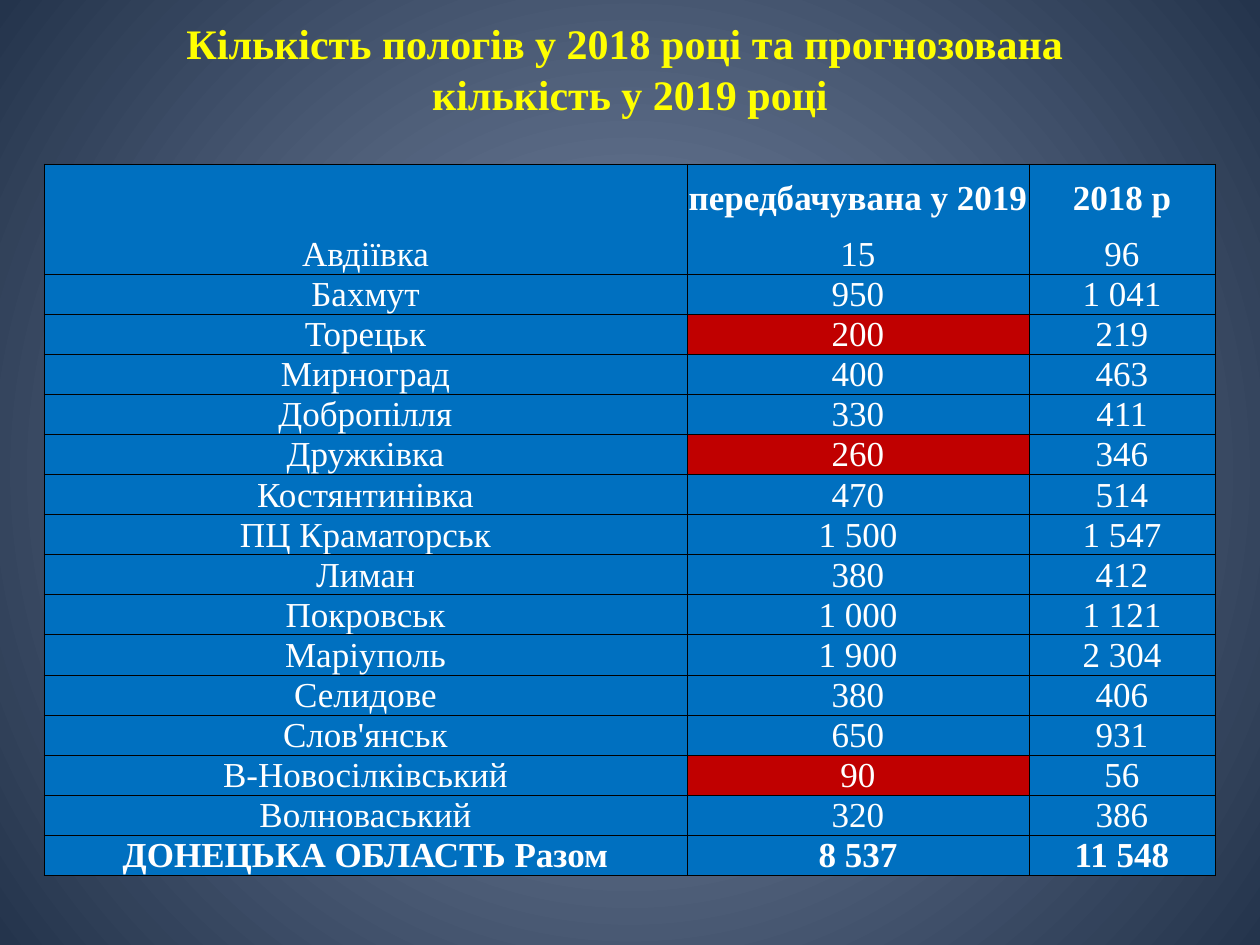
from lxml import etree
from pptx import Presentation, util as u
from pptx.dml.color import RGBColor
from pptx.enum import text
from pptx.oxml.ns import qn

TITLE = "Кількість пологів у 2018 році та прогнозована \nкількість у 2019 році"
ROWS = [
    ("", "передбачувана у 2019", "2018 р"),
    ("Авдiївка", "15", "96"),
    ("Бахмут", "950", "1 041"),
    ("Торецьк", "200", "219"),
    ("Мирноград", "400", "463"),
    ("Добропiлля", "330", "411"),
    ("Дружкiвка", "260", "346"),
    ("Костянтинiвка", "470", "514"),
    ("ПЦ Краматорськ", "1 500", "1 547"),
    ("Лиман", "380", "412"),
    ("Покровськ", "1 000", "1 121"),
    ("Марiуполь", "1 900", "2 304"),
    ("Селидове", "380", "406"),
    ("Слов'янськ", "650", "931"),
    ("В-Новосілкiвський", "90", "56"),
    ("Волноваський", "320", "386"),
    ("ДОНЕЦЬКА ОБЛАСТЬ Разом", "8 537", "11 548"),
]
ALERTS = {"Торецьк", "Дружкiвка", "В-Новосілкiвський"}  # forecast shown in red
COLS = (643, 342, 186)
HEAD_H, BODY_H = 70, 642
BLUE, RED, WHITE, YELLOW, BLACK = "0070C0", "C00000", "FFFFFF", "FFFF00", "000000"


def px(n):
    return u.Emu(n * 914400 // 126)


def rgb(color):
    return RGBColor.from_string(color)


def write(tf, words, size=20, color=WHITE, bold=False, spacing=None):
    p = tf.paragraphs[0]
    p.text = words
    p.alignment = text.PP_ALIGN.CENTER
    p.line_spacing = spacing
    for r in p.runs:
        r.font.name, r.font.size, r.font.bold = "Times New Roman", u.Pt(size), bold
        r.font.color.rgb = rgb(color)


def border(cell, hidden):
    tc_pr = cell._tc.get_or_add_tcPr()
    for i, side in enumerate("LRTB"):
        ln = etree.Element(qn(f"a:ln{side}"), w=str(u.Pt(0.5)))
        if side == hidden:
            etree.SubElement(ln, qn("a:noFill"))
        else:
            fill = etree.SubElement(ln, qn("a:solidFill"))
            etree.SubElement(fill, qn("a:srgbClr"), val=BLACK)
        tc_pr.insert(i, ln)


prs = Presentation()
prs.slide_width, prs.slide_height = px(1260), px(945)
s = prs.slides.add_slide(prs.slide_layouts[6])

# Background: circular gradient from the centre
fill = s.background.fill
fill.gradient()
for stop, color, pos in zip(fill.gradient_stops, ("7D8DAA", "24344C"), (0, 1)):
    stop.color.rgb, stop.position = rgb(color), pos
grad = s.element.find(".//" + qn("a:gradFill"))
grad.remove(grad.find(qn("a:lin")))
circle = etree.SubElement(grad, qn("a:path"), path="circle")
etree.SubElement(circle, qn("a:fillToRect"), {side: "50000" for side in "ltrb"})

# Title
tf = s.shapes.add_textbox(px(63), px(21), px(1134), px(94)).text_frame
tf.word_wrap = True
tf.vertical_anchor = text.MSO_ANCHOR.MIDDLE
write(tf, TITLE, size=24, color=YELLOW, bold=True)

# Table
body_rows = len(ROWS) - 1
heights = [px(HEAD_H)] + [px(BODY_H) // body_rows] * body_rows
table = s.shapes.add_table(len(ROWS), len(COLS), px(44), px(164),
                           px(sum(COLS)), sum(heights)).table
for col, width in zip(table.columns, COLS):
    col.width = px(width)
for row, height in zip(table.rows, heights):
    row.height = height
for i, values in enumerate(ROWS):
    for j, value in enumerate(values):
        cell = table.cell(i, j)
        cell.margin_left = cell.margin_right = px(1)
        cell.margin_top = cell.margin_bottom = 0
        cell.vertical_anchor = text.MSO_ANCHOR.BOTTOM if i else text.MSO_ANCHOR.MIDDLE
        cell.fill.solid()
        cell.fill.fore_color.rgb = rgb(RED if j == 1 and values[0] in ALERTS else BLUE)
        # no line between the header and the first town
        border(cell, {0: "B", 1: "T"}.get(i))
        # fixed spacing keeps the body rows from growing
        write(cell.text_frame, value, bold=i in (0, body_rows),
              spacing=u.Pt(21) if i else None)

prs.save("out.pptx")
